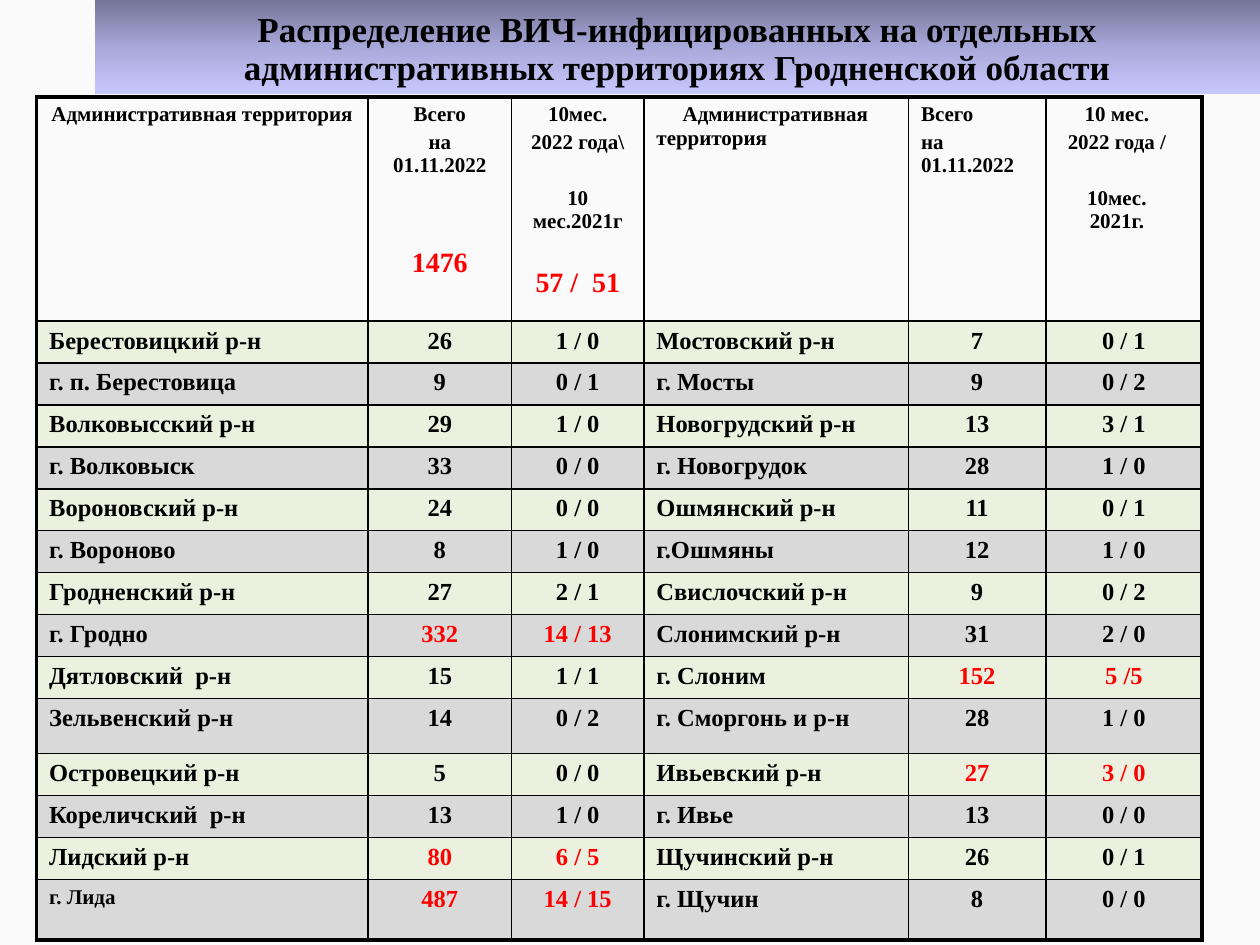
from copy import deepcopy

from lxml import etree
from pptx import Presentation
from pptx.dml.color import RGBColor
from pptx.enum.shapes import MSO_SHAPE
from pptx.enum.text import MSO_ANCHOR, PP_ALIGN
from pptx.oxml.ns import qn
from pptx.util import Pt

LEFT, CENTER = PP_ALIGN.LEFT, PP_ALIGN.CENTER
RECTANGLE, BOTTOM = MSO_SHAPE.RECTANGLE, MSO_ANCHOR.BOTTOM

FONT = "Times New Roman"
BLACK = RGBColor(0x00, 0x00, 0x00)
RED = RGBColor(0xFF, 0x00, 0x00)
PAPER = RGBColor(0xFA, 0xFA, 0xFA)
GREEN = RGBColor(0xEB, 0xF1, 0xDE)
GREY = RGBColor(0xD9, 0xD9, 0xD9)
TITLE_STOPS = [(0, RGBColor(0x74, 0x74, 0x97)),
               (0.5, RGBColor(0xA8, 0xA8, 0xDA)),
               (1, RGBColor(0xC8, 0xC8, 0xFF))]

TITLE = ("Распределение ВИЧ-инфицированных на отдельных "
         "административных территориях Гродненской области")

# Header cells: alignment, first-line indent, right margin,
# then lines of (text, size, colour, space before)
HEADERS = [
    (CENTER, 0, 0, [("Административная территория", 12, BLACK, 0)]),
    (CENTER, 0, 0, [("Всего", 12, BLACK, 0),
                    ("на 01.11.2022", 12, BLACK, 2.4),
                    ("1476", 16, RED, 40)]),
    (CENTER, 0, 0, [("10мес.", 12, BLACK, 0),
                    ("2022 года\\", 12, BLACK, 2.4),
                    ("10 мес.2021г", 12, BLACK, 18.6),
                    ("57 /  51", 16, RED, 19.4)]),
    (LEFT, 15, 0, [("Административная территория", 12, BLACK, 0)]),
    (LEFT, 0, 0, [("Всего", 12, BLACK, 0),
                  ("на 01.11.2022", 12, BLACK, 2.4)]),
    (CENTER, 0, 8, [("10 мес.", 12, BLACK, 0),
                    ("2022 года /", 12, BLACK, 2.4),
                    ("10мес. 2021г.", 12, BLACK, 18.6)]),
]

# Territory, total, ten months of 2022 / 2021: left and right half of the table
TERRITORIES = [
    (("Берестовицкий р-н", "26", "1 / 0"), ("Мостовский р-н", "7", "0 / 1")),
    (("г. п. Берестовица", "9", "0 / 1"), ("г. Мосты", "9", "0 / 2")),
    (("Волковысский р-н", "29", "1 / 0"), ("Новогрудский р-н", "13", "3 / 1")),
    (("г. Волковыск", "33", "0 / 0"), ("г. Новогрудок", "28", "1 / 0")),
    (("Вороновский р-н", "24", "0 / 0"), ("Ошмянский р-н", "11", "0 / 1")),
    (("г. Вороново", "8", "1 / 0"), ("г.Ошмяны", "12", "1 / 0")),
    (("Гродненский р-н", "27", "2 / 1"), ("Свислочский р-н", "9", "0 / 2")),
    (("г. Гродно", "332", "14 / 13"), ("Слонимский р-н", "31", "2 / 0")),
    (("Дятловский  р-н", "15", "1 / 1"), ("г. Слоним", "152", "5 /5")),
    (("Зельвенский р-н", "14", "0 / 2"), ("г. Сморгонь и р-н", "28", "1 / 0")),
    (("Островецкий р-н", "5", "0 / 0"), ("Ивьевский р-н", "27", "3 / 0")),
    (("Кореличский  р-н", "13", "1 / 0"), ("г. Ивье", "13", "0 / 0")),
    (("Лидский р-н", "80", "6 / 5"), ("Щучинский р-н", "26", "0 / 1")),
    (("г. Лида", "487", "14 / 15"), ("г. Щучин", "8", "0 / 0")),
]
HIGHLIGHTED = {"г. Гродно", "г. Слоним", "Ивьевский р-н", "Лидский р-н", "г. Лида"}
SMALL = {"г. Лида"}

COLUMN_WIDTHS = [189.4, 82.1, 75.6, 151.2, 78.5, 89.3]
HEADER_HEIGHT, ROW_HEIGHT = 128, 24
TALL_ROWS = {10: 31.5, 14: 34.5}
THIN, THICK = 1, 2.25


def add_span(para, text, size, color, align):
    para.alignment = align
    span = para.add_run()
    span.text = text
    span.font.name = FONT
    span.font.size = Pt(size)
    span.font.bold = True
    span.font.color.rgb = color


def set_borders(cell, widths):
    properties = cell._tc.get_or_add_tcPr()
    for index, (side, width) in enumerate(widths.items()):
        line = etree.Element(qn("a:ln" + side), w=str(Pt(width)))
        fill = etree.SubElement(line, qn("a:solidFill"))
        etree.SubElement(fill, qn("a:srgbClr"), val=str(BLACK))
        properties.insert(index, line)


def fill_header(cell, align, indent, right_margin, lines):
    cell.fill.background()
    for index, (text, size, color, gap) in enumerate(lines):
        frame = cell.text_frame
        para = frame.add_paragraph() if index else frame.paragraphs[0]
        add_span(para, text, size, color, align)
        if gap:
            para.space_before = Pt(gap)
        for name, value in (("indent", indent), ("marR", right_margin)):
            if value:
                para._p.get_or_add_pPr().set(name, str(Pt(value)))


def add_territory_table(page):
    row_count, column_count = len(TERRITORIES) + 1, len(COLUMN_WIDTHS)
    heights = [HEADER_HEIGHT] + [TALL_ROWS.get(row, ROW_HEIGHT)
                                 for row in range(1, row_count)]
    table = page.shapes.add_table(row_count, column_count, Pt(20.9), Pt(55.4),
                                  Pt(sum(COLUMN_WIDTHS)), Pt(sum(heights))).table
    table.first_row = table.horz_banding = False
    for column, width in zip(table.columns, COLUMN_WIDTHS):
        column.width = Pt(width)
    for row, height in zip(table.rows, heights):
        row.height = Pt(height)

    # Header row
    for column, header in enumerate(HEADERS):
        fill_header(table.cell(0, column), *header)

    # Territory rows
    for row, halves in enumerate(TERRITORIES, start=1):
        for half, entry in enumerate(halves):
            name = entry[0]
            for part, text in enumerate(entry):
                cell = table.cell(row, half * 3 + part)
                cell.fill.solid()
                cell.fill.fore_color.rgb = GREEN if row % 2 else GREY
                size = 12 if part == 0 and name in SMALL else 14
                color = RED if part and name in HIGHLIGHTED else BLACK
                add_span(cell.text_frame.paragraphs[0], text, size, color,
                         CENTER if part else LEFT)

    # Thick outer frame, thin inner grid
    for row in range(row_count):
        for column in range(column_count):
            set_borders(table.cell(row, column), {
                "L": THICK if column == 0 else THIN,
                "R": THICK if column == column_count - 1 else THIN,
                "T": THICK if row == 0 else THIN,
                "B": THICK if row == row_count - 1 else THIN,
            })


def add_title(page):
    box = page.shapes.add_shape(RECTANGLE, Pt(54), Pt(0), Pt(666), Pt(54))
    box.shadow.inherit = False
    box.line.fill.background()
    box.fill.gradient()
    box.fill.gradient_angle = 270
    stop_list = box._element.spPr.find(".//" + qn("a:gsLst"))
    stop_list.insert(1, deepcopy(stop_list[0]))
    for stop, (position, color) in zip(box.fill.gradient_stops, TITLE_STOPS):
        stop.position = position
        stop.color.rgb = color
    frame = box.text_frame
    frame.word_wrap = True
    frame.vertical_anchor = BOTTOM
    para = frame.paragraphs[0]
    para.line_spacing = 0.9
    add_span(para, TITLE, 20, BLACK, CENTER)


def main():
    deck = Presentation()
    deck.slide_width, deck.slide_height = Pt(720), Pt(540)
    page = deck.slides.add_slide(deck.slide_layouts[6])
    page.background.fill.solid()
    page.background.fill.fore_color.rgb = PAPER
    add_territory_table(page)
    add_title(page)
    deck.save("out.pptx")


if __name__ == "__main__":
    main()
